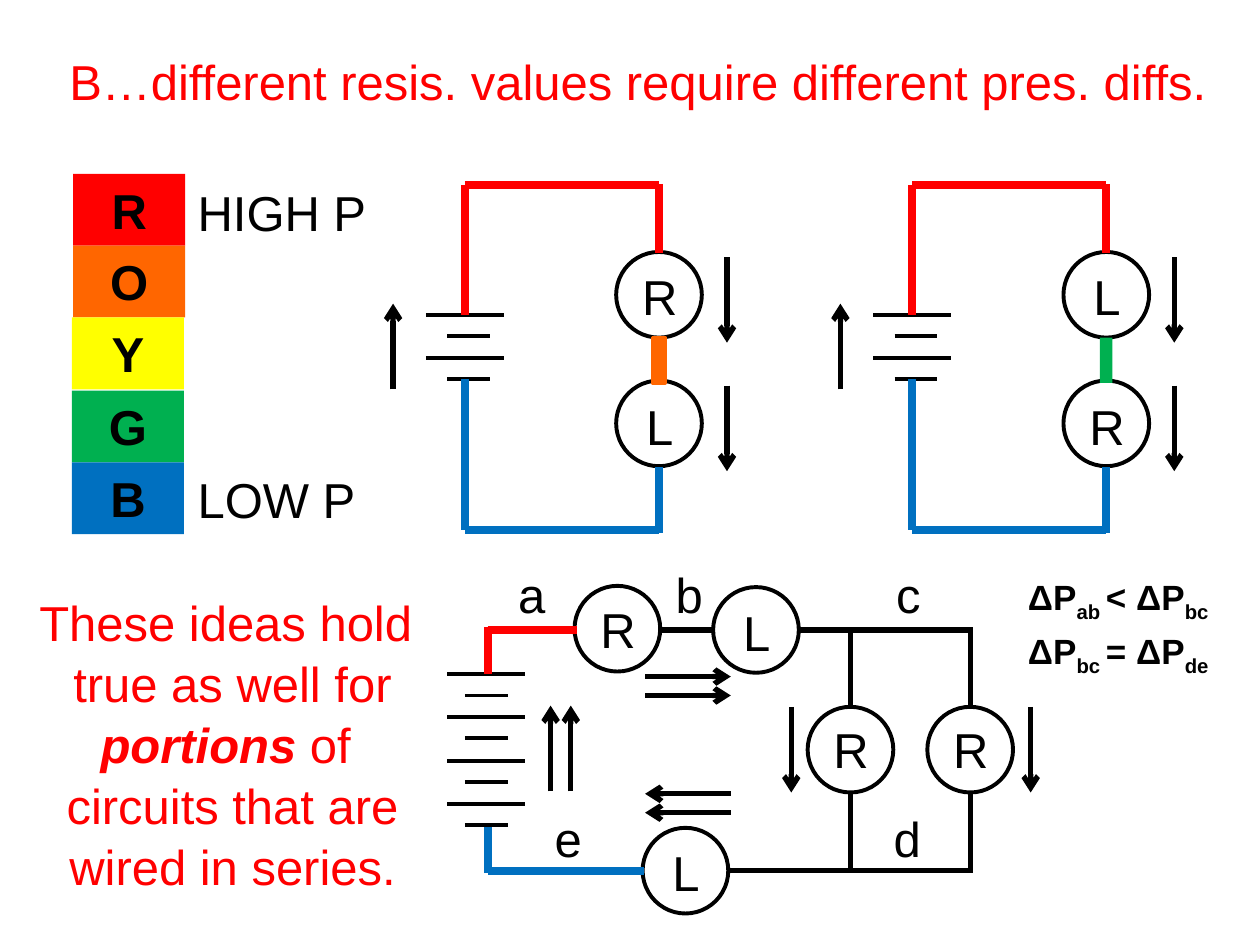
"""Build a slide on pressure differences in series circuits."""
from dataclasses import dataclass
from typing import NamedTuple

from lxml import etree
from pptx import Presentation
from pptx.dml.color import RGBColor
from pptx.enum.shapes import MSO_CONNECTOR, MSO_SHAPE
from pptx.enum.text import MSO_ANCHOR, MSO_AUTO_SIZE, PP_ALIGN
from pptx.oxml.ns import qn
from pptx.util import Pt

STRAIGHT = MSO_CONNECTOR.STRAIGHT
RECTANGLE, OVAL = MSO_SHAPE.RECTANGLE, MSO_SHAPE.OVAL
LEFT, CENTER = PP_ALIGN.LEFT, PP_ALIGN.CENTER
TOP = MSO_ANCHOR.TOP
FIT_SHAPE = MSO_AUTO_SIZE.SHAPE_TO_FIT_TEXT
EMU_PER_PX = 9144
LOAD_SIZE = 68
LABEL_HEIGHT = 57
CELL_GAP = 17.15
ARROW_LENGTH = 68


@dataclass(frozen=True)
class Theme:
    font: str = "Arial"
    body: float = 28
    small: float = 20
    thin: float = 2.25
    medium: float = 3
    thick: float = 4.5
    black: str = "000000"
    red: str = "FF0000"
    orange: str = "FF6600"
    yellow: str = "FFFF00"
    green: str = "00B050"
    blue: str = "0070C0"


THEME = Theme()


class Span(NamedTuple):
    text: str
    bold: bool = False
    italic: bool = False
    subscript: bool = False


class Wire(NamedTuple):
    x1: int
    y1: int
    x2: int
    y2: int
    color: str = THEME.black
    width: float = THEME.medium


class Load(NamedTuple):
    name: str
    left: int
    top: int
    label_drop: int = 7


class Label(NamedTuple):
    text: str
    left: int
    top: int
    width: int = 42
    align: PP_ALIGN = CENTER


class Series(NamedTuple):
    shift: int
    upper: str
    lower: str
    middle_color: str
    outlined: bool


def emu(*lengths: int) -> list[int]:
    return [round(length * EMU_PER_PX) for length in lengths]


def write(frame, lines: list[list[Span]], *, size: float = THEME.body,
          color: str = THEME.black, align: PP_ALIGN = CENTER,
          wrap: bool = False, spacing: float = 1.0) -> None:
    frame.word_wrap = wrap
    frame.auto_size = FIT_SHAPE
    frame.vertical_anchor = TOP
    for index, spans in enumerate(lines):
        para = frame.add_paragraph() if index else frame.paragraphs[0]
        para.alignment = align
        para.space_before = Pt(0)
        para.line_spacing = spacing
        for piece in spans:
            span = para.add_run()
            span.text = piece.text
            span.font.name = THEME.font
            span.font.size = Pt(size)
            span.font.bold = piece.bold
            span.font.italic = piece.italic
            span.font.color.rgb = RGBColor.from_string(color)
            if piece.subscript:
                span.font._element.set("baseline", "-25000")


def place(shape, left: int, top: int, width: int, height: int) -> None:
    shape.left, shape.top, shape.width, shape.height = emu(left, top, width, height)


def draw_label(slide, label: Label) -> None:
    box = slide.shapes.add_textbox(*emu(label.left, label.top, label.width, LABEL_HEIGHT))
    write(box.text_frame, [[Span(label.text)]], align=label.align)


def draw_wire(slide, wire: Wire, arrow: bool = False) -> None:
    line = slide.shapes.add_connector(STRAIGHT, *emu(wire.x1, wire.y1, wire.x2, wire.y2))
    line.line.color.rgb = RGBColor.from_string(wire.color)
    line.line.width = Pt(wire.width)
    if arrow:
        etree.SubElement(line.line._get_or_add_ln(), qn("a:tailEnd"), type="arrow")
    etree.SubElement(line._element.spPr, qn("a:effectLst"))


def draw_arrow(slide, x: int, y: int, dx: int = 0, dy: int = 0) -> None:
    end_x, end_y = x + dx * ARROW_LENGTH, y + dy * ARROW_LENGTH
    draw_wire(slide, Wire(x, y, end_x, end_y), arrow=True)


def draw_rectangle(slide, left: int, top: int, width: int, height: int,
                   color: str, outlined: bool = False):
    box = slide.shapes.add_shape(RECTANGLE, *emu(left, top, width, height))
    box.shadow.inherit = False
    box.fill.solid()
    box.fill.fore_color.rgb = RGBColor.from_string(color)
    if outlined:
        box.line.color.rgb = RGBColor.from_string(color)
        box.line.width = Pt(2)
    else:
        box.line.fill.background()
    return box


def draw_load(slide, load: Load) -> None:
    circle = slide.shapes.add_shape(OVAL, *emu(load.left, load.top, LOAD_SIZE, LOAD_SIZE))
    circle.shadow.inherit = False
    circle.fill.background()
    circle.line.color.rgb = RGBColor.from_string(THEME.black)
    circle.line.width = Pt(THEME.thin)
    draw_label(slide, Label(load.name, load.left + 10, load.top + load.label_drop, 49))


def draw_battery(slide, center: int, top: int, plates: int, short_shift: int = 0) -> None:
    for index in range(plates):
        y = top + round(index * CELL_GAP)
        middle, half = (center + short_shift, 17) if index % 2 else (center, 31)
        draw_wire(slide, Wire(middle - half, y, middle + half, y, width=THEME.thin))


def draw_series_circuit(slide, circuit: Series) -> None:
    shift = circuit.shift
    left, right = 369 + shift, 523 + shift
    draw_battery(slide, left, 250, 4, short_shift=3)
    draw_load(slide, Load(circuit.upper, 489 + shift, 200))
    draw_load(slide, Load(circuit.lower, 489 + shift, 302, 8))
    draw_rectangle(slide, 518 + shift, 268, 10, 36, circuit.middle_color, circuit.outlined)
    for x1, y1, x2, y2, color in (
            (left, 301, left, 421, THEME.blue), (left, 421, right, 421, THEME.blue),
            (right, 371, right, 423, THEME.blue), (left, 147, right, 147, THEME.red),
            (left, 147, left, 250, THEME.red), (right, 146, right, 201, THEME.red)):
        draw_wire(slide, Wire(x1, y1, x2, y2, color, THEME.thick))
    draw_arrow(slide, 312 + shift, 309, dy=-1)
    for y in (204, 306):
        draw_arrow(slide, 577 + shift, y, dy=1)


def draw_mixed_circuit(slide) -> None:
    draw_battery(slide, 386, 535, 8)
    for load in (Load("R", 456, 465, 6), Load("L", 566, 466), Load("R", 641, 561, 5),
                 Load("R", 736, 561, 5), Load("L", 510, 657)):
        draw_load(slide, load)
    for wire in (Wire(387, 500, 458, 500, THEME.red, THEME.thick),
                 Wire(387, 498, 387, 535, THEME.red, THEME.thick),
                 Wire(387, 691, 511, 691, THEME.blue, THEME.thick),
                 Wire(387, 693, 387, 656, THEME.blue, THEME.thick),
                 Wire(525, 500, 566, 500), Wire(634, 500, 772, 500),
                 Wire(579, 691, 772, 691)):
        draw_wire(slide, wire)
    for x in (675, 770):
        draw_wire(slide, Wire(x, 500, x, 561))
        draw_wire(slide, Wire(x, 629, x, 691))
    for y in (537, 552):
        draw_arrow(slide, 512, y, dx=1)
    for y in (630, 645):
        draw_arrow(slide, 580, y, dx=-1)
    for x in (437, 453):
        draw_arrow(slide, x, 628, dy=-1)
    for x in (628, 818):
        draw_arrow(slide, x, 561, dy=1)
    for label in (Label("a", 401, 443), Label("b", 526, 443), Label("c", 700, 443),
                  Label("d", 699, 637), Label("e", 430, 637)):
        draw_label(slide, label)


def draw_pressure_scale(slide) -> None:
    colors = (THEME.red, THEME.orange, THEME.yellow, THEME.green, THEME.blue)
    for index, (letter, color) in enumerate(zip("ROYGB", colors)):
        left = 58 if index < 2 else 57
        box = draw_rectangle(slide, left, 138 + round(57.25 * index), 89, 57, color)
        write(box.text_frame, [[Span(letter, bold=True)]], wrap=True)
    draw_label(slide, Label("HIGH P", 147, 140, 155, LEFT))
    draw_label(slide, Label("LOW P", 147, 368, 147, LEFT))


def draw_comparison(slide, top: int, first: str, sign: str, second: str) -> None:
    box = slide.shapes.add_textbox(*emu(805, top, 165, 44))
    spans = [Span("ΔP", True), Span(f"{first} ", True, subscript=True),
             Span(f"{sign} ΔP", True), Span(second, True, subscript=True)]
    write(box.text_frame, [spans], size=THEME.small)


def fill_placeholders(slide) -> None:
    title, body = slide.placeholders
    place(title, 45, 36, 934, LABEL_HEIGHT)
    write(title.text_frame, [[Span("B…different resis. values require different pres. diffs.")]],
          color=THEME.red, align=LEFT)
    place(body, 19, 463, 331, 246)
    write(body.text_frame, [
        [Span("These ideas hold ")], [Span("true as well for")],
        [Span("portions", bold=True, italic=True), Span(" of ")],
        [Span("circuits that are")], [Span("wired in series.")]],
        color=THEME.red, spacing=1.04)
    for para in body.text_frame.paragraphs:
        properties = para._p.get_or_add_pPr()
        properties.set("marL", "0")
        properties.set("indent", "0")
        etree.SubElement(properties, qn("a:buNone"))


def main() -> None:
    deck = Presentation()
    deck.slide_width, deck.slide_height = emu(1000, 750)
    slide = deck.slides.add_slide(deck.slide_layouts[1])
    fill_placeholders(slide)
    draw_pressure_scale(slide)
    draw_series_circuit(slide, Series(0, "R", "L", THEME.orange, True))
    draw_series_circuit(slide, Series(355, "L", "R", THEME.green, False))
    draw_mixed_circuit(slide)
    draw_comparison(slide, 452, "ab", "<", "bc")
    draw_comparison(slide, 495, "bc", "=", "de")
    deck.save("out.pptx")


if __name__ == "__main__":
    main()
